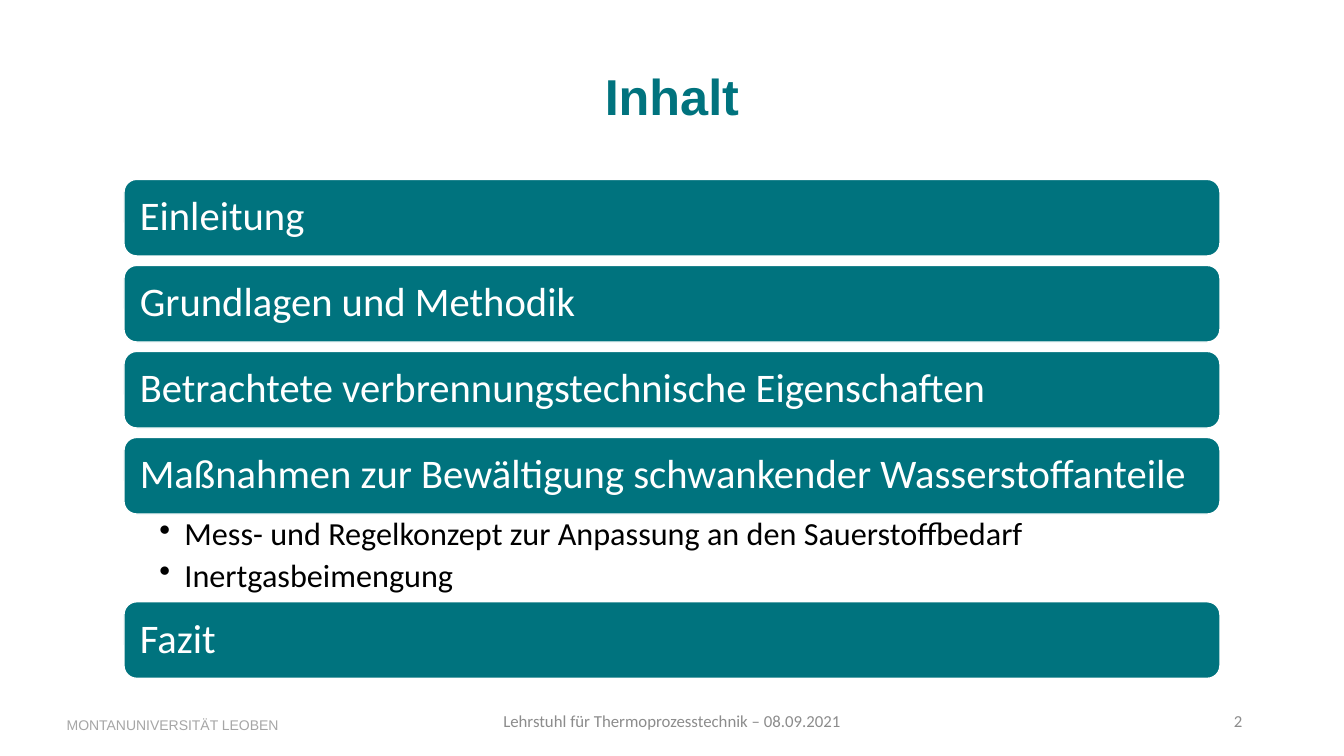
from lxml import etree
from pptx import Presentation
from pptx.dml.color import RGBColor
from pptx.enum import shapes, text
from pptx.oxml.ns import qn
from pptx.util import Inches, Pt

TEAL = RGBColor(0x00, 0x73, 0x7E)
WHITE = RGBColor(0xFF, 0xFF, 0xFF)
BLACK = RGBColor(0x00, 0x00, 0x00)
GRAY = RGBColor(0x8C, 0x8C, 0x8C)
LIGHT_GRAY = RGBColor(0xA6, 0xA6, 0xA6)

BAR_LEFT, BAR_WIDTH, BAR_HEIGHT = 1.23, 10.87, 0.76
FIRST_TOP, FOURTH_TOP, LAST_TOP = 1.78, 4.34, 5.97
BAR_PITCH = (FOURTH_TOP - FIRST_TOP) / 3

TOPICS = [
    "Einleitung",
    "Grundlagen und Methodik",
    "Betrachtete verbrennungstechnische Eigenschaften",
    "Maßnahmen zur Bewältigung schwankender Wasserstoffanteile",
]
MEASURES = [
    "Mess- und Regelkonzept zur Anpassung an den Sauerstoffbedarf",
    "Inertgasbeimengung",
]


def format_paragraph(paragraph, size, color, name="Calibri", bold=False,
                     alignment=text.PP_ALIGN.LEFT):
    paragraph.alignment = alignment
    font = paragraph.font
    font.size = Pt(size)
    font.name = name
    font.bold = bold
    font.color.rgb = color


def set_title(slide, wording):
    title = slide.shapes.title
    title.left, title.top = Inches(0.36), Inches(0.4)
    title.width, title.height = Inches(12.61), Inches(1.16)
    frame = title.text_frame
    frame.text = wording
    frame.vertical_anchor = text.MSO_ANCHOR.MIDDLE
    paragraph = frame.paragraphs[0]
    paragraph.line_spacing = 0.9
    format_paragraph(paragraph, 36, TEAL, "Arial", True, text.PP_ALIGN.CENTER)


def add_topic_bar(slide, top, wording):
    bar = slide.shapes.add_shape(
        shapes.MSO_SHAPE.ROUNDED_RECTANGLE, Inches(BAR_LEFT), Inches(top),
        Inches(BAR_WIDTH), Inches(BAR_HEIGHT))
    bar.shadow.inherit = False
    bar.fill.solid()
    bar.fill.fore_color.rgb = TEAL
    bar.line.color.rgb = WHITE
    bar.line.width = Pt(1)
    frame = bar.text_frame
    frame.margin_left = frame.margin_right = Inches(0.12)
    frame.margin_top = frame.margin_bottom = Inches(0)
    frame.vertical_anchor = text.MSO_ANCHOR.MIDDLE
    frame.text = wording
    paragraph = frame.paragraphs[0]
    paragraph.line_spacing = 0.9
    format_paragraph(paragraph, 29, WHITE)


def add_bullet(paragraph):
    properties = paragraph._p.get_or_add_pPr()
    properties.set("marL", str(Inches(0.25)))
    properties.set("indent", str(Inches(-0.25)))
    etree.SubElement(properties, qn("a:buChar"), char="•")


def add_bullet_list(slide, top, height, items):
    box = slide.shapes.add_textbox(
        Inches(BAR_LEFT), Inches(top), Inches(BAR_WIDTH), Inches(height))
    frame = box.text_frame
    frame.word_wrap = True
    frame.margin_left, frame.margin_right = Inches(0.35), Inches(0.23)
    frame.margin_top = frame.margin_bottom = Inches(0.04)
    frame.text = "\n".join(items)
    for paragraph in frame.paragraphs:
        add_bullet(paragraph)
        paragraph.line_spacing = 0.9
        paragraph.space_after = Pt(4.6)
        format_paragraph(paragraph, 23, BLACK)


def add_footer(slide, left, top, width, height, wording, size, color, name, alignment):
    box = slide.shapes.add_textbox(
        Inches(left), Inches(top), Inches(width), Inches(height))
    frame = box.text_frame
    frame.word_wrap = True
    frame.vertical_anchor = text.MSO_ANCHOR.MIDDLE
    frame.text = wording
    format_paragraph(frame.paragraphs[0], size, color, name, alignment=alignment)


def main():
    presentation = Presentation()
    presentation.slide_width = Inches(13.33)
    presentation.slide_height = Inches(7.5)
    slide = presentation.slides.add_slide(presentation.slide_layouts[5])

    set_title(slide, "Inhalt")
    for index, topic in enumerate(TOPICS):
        add_topic_bar(slide, FIRST_TOP + index * BAR_PITCH, topic)
    list_top = FOURTH_TOP + BAR_HEIGHT
    add_bullet_list(slide, list_top, LAST_TOP - list_top, MEASURES)
    add_topic_bar(slide, LAST_TOP, "Fazit")

    add_footer(slide, 0.48, 7.06, 2.38, 0.27, "MONTANUNIVERSITÄT LEOBEN",
               10, LIGHT_GRAY, "Arial", text.PP_ALIGN.RIGHT)
    add_footer(slide, 4.69, 6.95, 3.95, 0.4,
               "Lehrstuhl für Thermoprozesstechnik – 08.09.2021",
               12, GRAY, "Calibri", text.PP_ALIGN.CENTER)
    add_footer(slide, 9.42, 6.95, 3, 0.4, "2",
               12, GRAY, "Calibri", text.PP_ALIGN.RIGHT)
    presentation.save("out.pptx")


if __name__ == "__main__":
    main()
